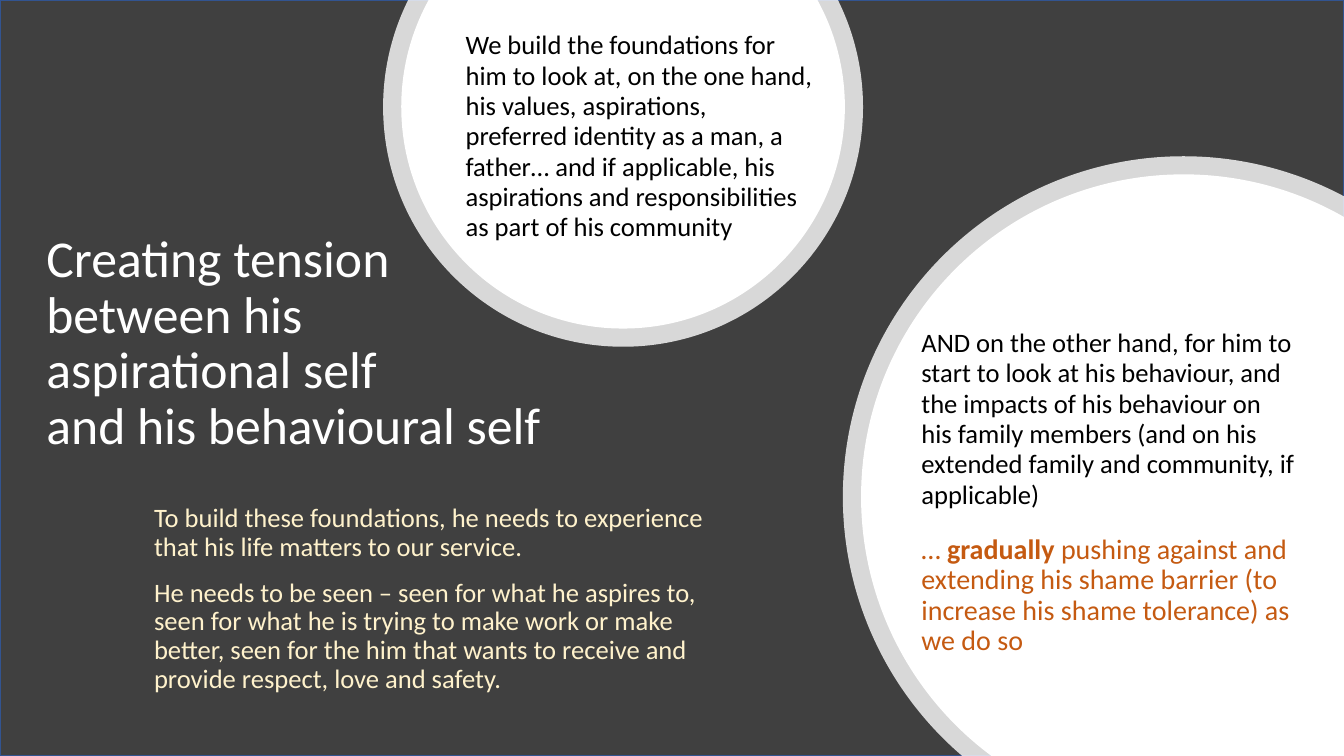
from math import acos, asin, ceil, cos, floor, pi, sin, tan

from lxml import etree
from pptx import Presentation
from pptx.dml.color import RGBColor
from pptx.enum.shapes import MSO_SHAPE as SHAPE
from pptx.enum.text import MSO_ANCHOR as ANCHOR, MSO_AUTO_SIZE as AUTO, PP_ALIGN as ALIGN
from pptx.oxml.ns import qn
from pptx.util import Inches, Pt

WIDTH, HEIGHT = 13.33, 7.5
FONT = "Calibri"
RING = 0.18  # width of the pale ring around each disc

DARK = RGBColor(0x40, 0x40, 0x40)
EDGE = RGBColor(0x32, 0x54, 0x91)
WHITE = RGBColor(0xFF, 0xFF, 0xFF)
BLACK = RGBColor(0, 0, 0)
CREAM = RGBColor(0xFF, 0xF2, 0xCC)
ORANGE = RGBColor(0xC5, 0x5A, 0x11)


def add_background(s):
    sp = s.shapes.add_shape(SHAPE.RECTANGLE, 0, 0, Inches(WIDTH), Inches(HEIGHT))
    sp.shadow.inherit = False
    sp.fill.solid()
    sp.fill.fore_color.rgb = DARK
    sp.line.color.rgb = EDGE
    sp.line.width = Pt(1)


def arc_points(cx, cy, radius, start, end):
    """Return Bezier points for an arc, split at the quadrants."""
    quarter = pi / 2
    splits = range(floor(start / quarter) + 1, ceil(end / quarter))
    angles = [start, *(n * quarter for n in splits), end]
    points = [(cx + radius * cos(start), cy + radius * sin(start))]
    for a, b in zip(angles, angles[1:]):
        k = 4 / 3 * tan((b - a) / 4)
        for angle, pull in ((a, k), (b, -k), (b, 0)):
            points.append((cx + radius * (cos(angle) - pull * sin(angle)),
                           cy + radius * (sin(angle) + pull * cos(angle))))
    return points


def add_cut_disc(s, cx, cy, radius, start, end, corners=(), alpha=None):
    """Draw a white arc closed through the corners; alpha is a percentage."""
    arc = arc_points(cx, cy, radius, start, end)
    points = [(Inches(x), Inches(y)) for x, y in (*arc, *corners)]
    builder = s.shapes.build_freeform(*points[0])
    builder.add_line_segments(points[1:], close=True)
    sp = builder.convert_to_shape()
    # Turn each three line steps of the arc into one curve
    steps = list(sp._element.iter(qn("a:lnTo")))[:len(arc) - 1]
    for i in range(0, len(steps), 3):
        curve = etree.Element(qn("a:cubicBezTo"))
        steps[i].addprevious(curve)
        for step in steps[i:i + 3]:
            curve.append(step[0])
            step.getparent().remove(step)
    sp.shadow.inherit = False
    sp.fill.solid()
    sp.fill.fore_color.rgb = WHITE
    sp.line.fill.background()
    if alpha is not None:
        color = sp._element.spPr.find(".//" + qn("a:srgbClr"))
        etree.SubElement(color, qn("a:alpha")).set("val", str(alpha * 1000))


def add_top_disc(s, radius, alpha=None):
    cx, cy = 6.18, 1.06
    start = -asin(cy / radius)
    add_cut_disc(s, cx, cy, radius, start, pi - start, alpha=alpha)


def add_right_disc(s, radius, alpha=None):
    cx, cy = 11.74, 4.93
    start = pi - asin((HEIGHT - cy) / radius)
    end = 2 * pi - acos((WIDTH - cx) / radius)
    add_cut_disc(s, cx, cy, radius, start, end, [(WIDTH, HEIGHT)], alpha)


def add_text(p, *parts, size, color, spacing=0.9, after=0):
    """Fill a paragraph with (text, bold) parts."""
    p.alignment = ALIGN.LEFT
    p.line_spacing = spacing
    p.space_before = Pt(0)
    p.space_after = Pt(after)
    for text, bold in parts:
        for i, line in enumerate(text.split("\n")):
            if i:
                p.add_line_break()
            r = p.add_run()
            r.text = line
            r.font.name = FONT
            r.font.size = Pt(size)
            r.font.bold = bold
            r.font.color.rgb = color


def add_box(s, x, y, w, h, anchor=ANCHOR.MIDDLE):
    tf = s.shapes.add_textbox(Inches(x), Inches(y), Inches(w), Inches(h)).text_frame
    tf.word_wrap = True
    tf.vertical_anchor = anchor
    return tf


def add_title(s, text):
    sp = s.shapes.title
    sp.left, sp.top, sp.width, sp.height = (Inches(v) for v in (0.36, 2.5, 6.62, 2.48))
    tf = sp.text_frame
    tf.word_wrap = True
    tf.auto_size = AUTO.NONE
    tf.vertical_anchor = ANCHOR.MIDDLE
    tf.margin_bottom = Inches(0.7)
    add_text(tf.paragraphs[0], (text, False), size=36.9, color=WHITE)
    # Bring the title in front of the background
    s.shapes._spTree.append(sp._element)


def main():
    prs = Presentation()
    prs.slide_width, prs.slide_height = Inches(WIDTH), Inches(HEIGHT)
    s = prs.slides.add_slide(prs.slide_layouts[5])

    # Background and title
    add_background(s)
    add_title(s, "Creating tension\nbetween his\naspirational self\nand his behavioural self")

    # Pale rings
    add_top_disc(s, 2.2 + RING, alpha=80)
    add_right_disc(s, 3.2 + RING, alpha=80)

    # Aspirations
    add_top_disc(s, 2.2)
    tf = add_box(s, 4.52, -0.17, 3.65, 3.05)
    add_text(tf.paragraphs[0],
             ("We build the foundations for him to look at, on the one hand, his values, "
              "aspirations, preferred identity as a man, a father… and if applicable, his "
              "aspirations and responsibilities as part of his community", False),
             size=19, color=BLACK, spacing=0.95, after=12)

    # Behaviour
    add_right_disc(s, 3.2)
    tf = add_box(s, 9.04, 2.58, 3.92, 4.61)
    add_text(tf.paragraphs[0],
             ("AND on the other hand, for him to start to look at his behaviour, and the "
              "impacts of his behaviour on his family members (and on his extended family "
              "and community, if applicable)", False),
             size=19, color=BLACK, spacing=0.95, after=18)
    add_text(tf.add_paragraph(),
             ("… ", False), ("gradually", True),
             (" pushing against and extending his shame barrier (to increase his shame "
              "tolerance) as we do so", False),
             size=20, color=ORANGE, after=6)

    # What he needs from the service
    tf = add_box(s, 1.43, 4.96, 6.04, 2, anchor=ANCHOR.TOP)
    tf.auto_size = AUTO.SHAPE_TO_FIT_TEXT
    add_text(tf.paragraphs[0],
             ("To build these foundations, he needs to experience that his life matters "
              "to our service.", False),
             size=19, color=CREAM, after=12)
    add_text(tf.add_paragraph(),
             ("He needs to be seen – seen for what he aspires to, seen for what he is "
              "trying to make work or make better, seen for the him that wants to receive "
              "and provide respect, love and safety.", False),
             size=19, color=CREAM, after=12)

    prs.save("out.pptx")


if __name__ == "__main__":
    main()
